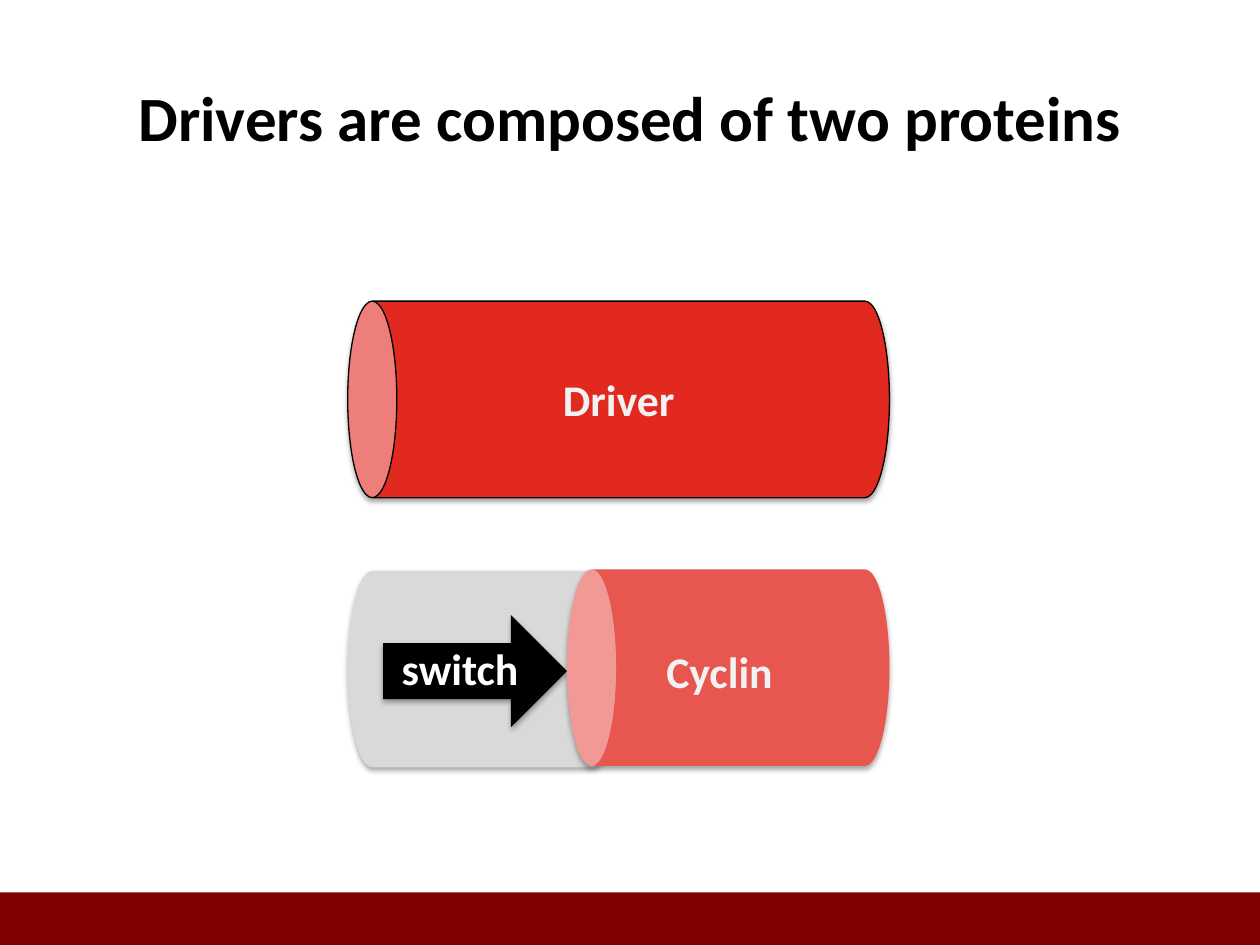
"""Build a slide that shows a driver as a switch and a cyclin."""
from lxml import etree
from pptx import Presentation
from pptx.dml.color import RGBColor
from pptx.enum.shapes import MSO_SHAPE
from pptx.enum.text import MSO_ANCHOR, MSO_AUTO_SIZE, PP_ALIGN
from pptx.oxml.ns import qn
from pptx.util import Pt

RECTANGLE, CAN, LEFT_ARROW = MSO_SHAPE.RECTANGLE, MSO_SHAPE.CAN, MSO_SHAPE.LEFT_ARROW
LEFT, CENTER = PP_ALIGN.LEFT, PP_ALIGN.CENTER
MIDDLE, FIT_SHAPE = MSO_ANCHOR.MIDDLE, MSO_AUTO_SIZE.SHAPE_TO_FIT_TEXT
TITLE_ONLY = 5
WIDTH, HEIGHT = 720, 540
BAR_HEIGHT = 30
THICKNESS = 112.3
LEFT_END, RIGHT_END = 198.7, 508.3
CYCLIN_LEFT, GREY_RIGHT = 324, 352.8


def color(value):
    return RGBColor.from_string(value)


def write(frame, text, size=25, fill="F2F2F2", font="Calibri", align=LEFT):
    paragraph = frame.paragraphs[0]
    paragraph.alignment = align
    run = paragraph.add_run()
    run.text = text
    run.font.name = font
    run.font.size = Pt(size)
    run.font.bold = True
    run.font.color.rgb = color(fill)


class SlideBuilder:
    def __init__(self, slide, shadow_color="000000"):
        self.slide = slide
        self.shadow_color = shadow_color

    def title(self, text, left, top, width, height):
        shape = self.slide.shapes.title
        shape.left, shape.top, shape.width, shape.height = map(Pt, (left, top, width, height))
        shape.text_frame.vertical_anchor = MIDDLE
        write(shape.text_frame, text, size=36, fill="000000", align=CENTER)

    def shape(self, kind, left, top, width, height, fill, line=None, rotation=0):
        shape = self.slide.shapes.add_shape(kind, *map(Pt, (left, top, width, height)))
        shape.rotation = rotation
        shape.fill.solid()
        shape.fill.fore_color.rgb = color(fill)
        if line:
            shape.line.color.rgb = color(line)
            shape.line.width = Pt(0.75)
        else:
            shape.line.fill.background()
        self.shadow(shape)
        return shape

    def shadow(self, shape):
        shape.shadow.inherit = False
        effects = shape._element.spPr.find(qn("a:effectLst"))
        outer = etree.SubElement(effects, qn("a:outerShdw"), blurRad=str(Pt(3.1)),
                                 dist=str(Pt(1.8)), dir="5400000", rotWithShape="0")
        shade = etree.SubElement(outer, qn("a:srgbClr"), val=self.shadow_color)
        etree.SubElement(shade, qn("a:alpha"), val="35000")

    def cylinder(self, left, right, top, fill, line=None, rotation=270):
        length = right - left
        offset = (length - THICKNESS) / 2
        shape = self.shape(CAN, left + offset, top - offset, THICKNESS, length,
                           fill, line, rotation)
        shape._element.spPr.xfrm.set("flipH", "1")

    def label(self, text, left, top, width, fill="F2F2F2"):
        box = self.slide.shapes.add_textbox(*map(Pt, (left, top, width, 37.4)))
        box.text_frame.word_wrap = True
        box.text_frame.auto_size = FIT_SHAPE
        write(box.text_frame, text, fill=fill)


def main():
    presentation = Presentation()
    presentation.slide_width, presentation.slide_height = Pt(WIDTH), Pt(HEIGHT)
    slide = presentation.slides.add_slide(presentation.slide_layouts[TITLE_ONLY])
    builder = SlideBuilder(slide)

    builder.shape(RECTANGLE, 0, HEIGHT - BAR_HEIGHT, WIDTH, BAR_HEIGHT, "800000")
    builder.title("Drivers are composed of two proteins", 0, 21.6, WIDTH, 90)

    builder.cylinder(LEFT_END, GREY_RIGHT, 326.2, "D9D9D9", rotation=90)
    builder.shape(LEFT_ARROW, 218.9, 351.4, 105.1, 64.1, "000000", rotation=180)
    builder.label("switch", 222.5, 362.9, 84.2, fill="FFFFFF")
    builder.cylinder(CYCLIN_LEFT, RIGHT_END, 325.4, "E7564F")
    builder.label("Cyclin", 373.7, 365, 117.4)

    builder.cylinder(LEFT_END, RIGHT_END, 172.1, "E12920", line="000000")
    builder.label("Driver", 314.6, 209.5, 117.4)

    presentation.save("out.pptx")


if __name__ == "__main__":
    main()
